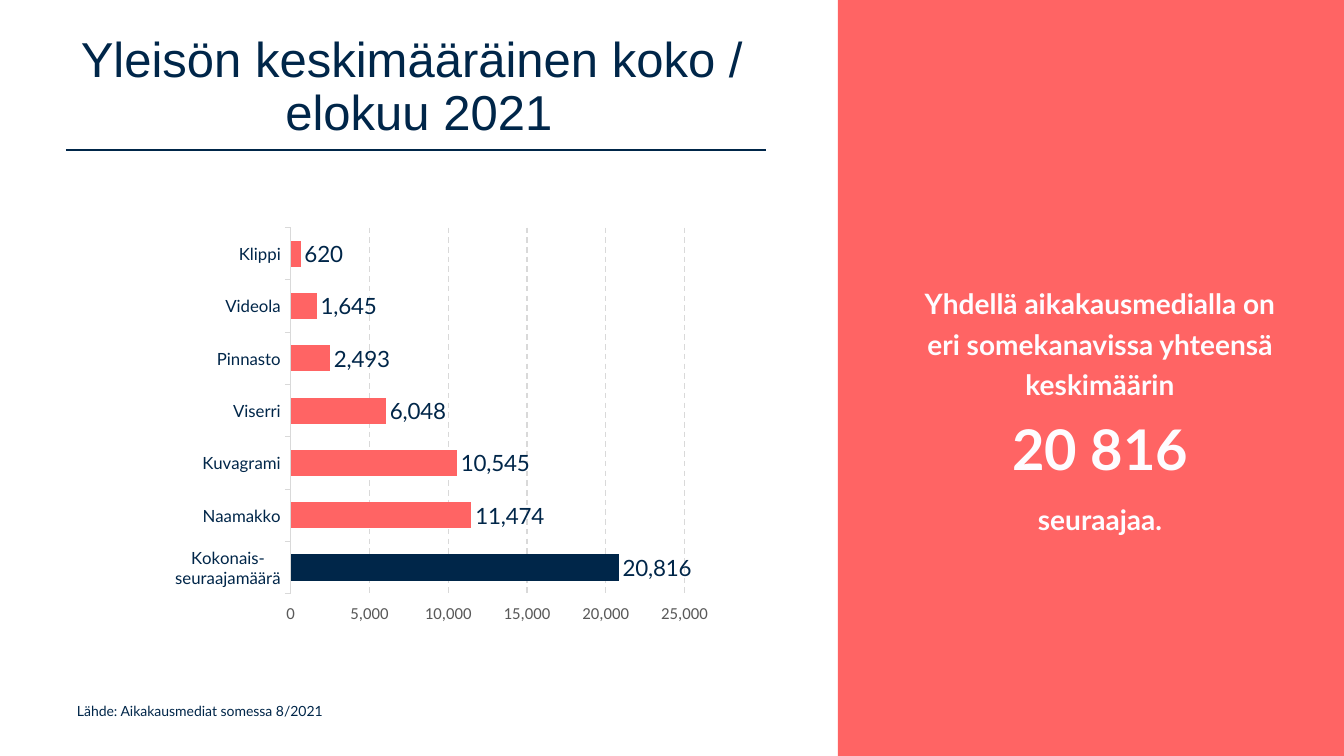
from dataclasses import dataclass

from pptx import Presentation
from pptx.chart.data import CategoryChartData
from pptx.dml.color import RGBColor
from pptx.enum.chart import XL_CHART_TYPE as ChartType
from pptx.enum.chart import XL_LABEL_POSITION as LabelPos
from pptx.enum.chart import XL_TICK_MARK as Tick
from pptx.enum.dml import MSO_LINE_DASH_STYLE as Dash
from pptx.enum.shapes import MSO_CONNECTOR as Connector
from pptx.enum.shapes import MSO_SHAPE as Shape
from pptx.enum.text import MSO_ANCHOR as Anchor
from pptx.enum.text import PP_ALIGN as Align
from pptx.oxml import parse_xml
from pptx.oxml.ns import nsdecls, qn
from pptx.slide import Slide
from pptx.text.text import Font
from pptx.util import Emu, Pt

NAVY = RGBColor(0x00, 0x26, 0x49)
CORAL = RGBColor(0xFF, 0x64, 0x64)
OFF_WHITE = RGBColor(0xFE, 0xFC, 0xFF)
LIGHT_GREY = RGBColor(0xD9, 0xD9, 0xD9)
DARK_GREY = RGBColor(0x59, 0x59, 0x59)

SLIDE_W, SLIDE_H = 1344, 756
PANEL_X = 838

FOLLOWERS = [
    ("Kokonais-\nseuraajamäärä", 20816),
    ("Naamakko", 11474),
    ("Kuvagrami", 10545),
    ("Viserri", 6048),
    ("Pinnasto", 2493),
    ("Videola", 1645),
    ("Klippi", 620),
]


@dataclass(frozen=True)
class Piece:
    text: str
    size: int
    break_before: bool = False


@dataclass(frozen=True)
class TextBlock:
    box: tuple[int, int, int, int]
    paragraphs: list[list[Piece]]
    font: str
    color: RGBColor
    bold: bool = False
    align: Align = Align.CENTER
    anchor: Anchor = Anchor.MIDDLE
    line_spacing: float = 1.0
    space_before: int = 0


TEXTS = [
    TextBlock((0, 25, PANEL_X, 126),
              [[Piece("Yleisön keskimääräinen koko / ", 35),
                Piece("elokuu 2021", 35, break_before=True)]],
              "Arial", NAVY, line_spacing=0.9),
    TextBlock((911, 151, 378, 514),
              [[Piece("Yhdellä aikakausmedialla on eri somekanavissa "
                      "yhteensä keskimäärin", 20),
                Piece("20 816", 40, break_before=True)],
               [Piece("seuraajaa.", 20)]],
              "Lato", OFF_WHITE, bold=True, line_spacing=1.2, space_before=10),
    TextBlock((67, 698, 663, 44),
              [[Piece("Lähde: Aikakausmediat somessa 8/2021", 10)]],
              "Lato", NAVY, align=Align.LEFT, anchor=Anchor.TOP),
]


def px(length: int) -> Emu:
    return Emu(round(length * 12192000 / SLIDE_W))


def style_font(font: Font, name: str, size: int, color: RGBColor,
               bold: bool = False) -> None:
    font.name = name
    font.size = Pt(size)
    font.bold = bold
    font.color.rgb = color


def draw_text(slide: Slide, block: TextBlock) -> None:
    frame = slide.shapes.add_textbox(*map(px, block.box)).text_frame
    frame.word_wrap = True
    frame.vertical_anchor = block.anchor
    for index, pieces in enumerate(block.paragraphs):
        paragraph = frame.add_paragraph() if index else frame.paragraphs[0]
        paragraph.alignment = block.align
        paragraph.line_spacing = block.line_spacing
        if index:
            paragraph.space_before = Pt(block.space_before)
        for piece in pieces:
            if piece.break_before:
                paragraph.add_line_break()
            run = paragraph.add_run()
            run.text = piece.text
            style_font(run.font, block.font, piece.size, block.color, block.bold)


def draw_panel(slide: Slide) -> None:
    panel = slide.shapes.add_shape(
        Shape.RECTANGLE, px(PANEL_X), 0, px(SLIDE_W - PANEL_X), px(SLIDE_H))
    panel.shadow.inherit = False
    panel.fill.solid()
    panel.fill.fore_color.rgb = CORAL
    panel.line.fill.background()


def draw_title_rule(slide: Slide) -> None:
    rule = slide.shapes.add_connector(
        Connector.STRAIGHT, px(66), px(150), px(766), px(150))
    rule.line.color.rgb = NAVY
    rule.line.width = Pt(1)
    rule.element.spPr.append(parse_xml(f"<a:effectLst {nsdecls('a')}/>"))


def draw_follower_chart(slide: Slide) -> None:
    data = CategoryChartData(number_format="#,##0")
    data.categories = [channel for channel, _ in FOLLOWERS]
    data.add_series("Series 1", [count for _, count in FOLLOWERS])
    chart = slide.shapes.add_chart(
        ChartType.BAR_CLUSTERED, 0, px(190), px(PANEL_X), px(437), data).chart
    chart.has_title = False
    chart.has_legend = False
    chart.font.name = "Calibri"
    chart.font.size = Pt(10)

    # Bars: the total stands out in navy
    plot = chart.plots[0]
    plot.gap_width = 100
    plot.vary_by_categories = False
    series = plot.series[0]
    series.invert_if_negative = False
    for target, color in ((series, CORAL), (series.points[0], NAVY)):
        target.format.fill.solid()
        target.format.fill.fore_color.rgb = color

    labels = series.data_labels
    labels.show_value = True
    labels.position = LabelPos.OUTSIDE_END
    labels.number_format = "#,##0"
    labels.number_format_is_linked = False
    style_font(labels.font, "Lato", 16, NAVY)

    # Axes
    channels = chart.category_axis
    channels.major_tick_mark = Tick.OUTSIDE
    channels.format.line.color.rgb = LIGHT_GREY
    channels.format.line.width = Pt(0.75)
    style_font(channels.tick_labels.font, "Lato", 12, NAVY)

    counts = chart.value_axis
    counts.minimum_scale, counts.maximum_scale = 0, 25000
    counts.major_unit = 5000
    counts.major_tick_mark = Tick.OUTSIDE
    counts.format.line.fill.background()
    counts.has_major_gridlines = True
    grid = counts.major_gridlines.format.line
    grid.color.rgb = LIGHT_GREY
    grid.width = Pt(1)
    grid.dash_style = Dash.DASH
    counts.tick_labels.number_format = "#,##0"
    counts.tick_labels.number_format_is_linked = False
    style_font(counts.tick_labels.font, "Calibri", 12, DARK_GREY)

    # Fixed place of the plot inside the chart
    plot_area = chart.element.find(".//" + qn("c:plotArea"))
    for layout in plot_area.findall(qn("c:layout")):
        plot_area.remove(layout)
    sizes = "".join(f'<c:{tag} val="{share}"/>' for tag, share in
                    (("x", 0.347), ("y", 0.086), ("w", 0.47), ("h", 0.838)))
    plot_area.insert(0, parse_xml(
        f"<c:layout {nsdecls('c')}><c:manualLayout>"
        '<c:layoutTarget val="inner"/><c:xMode val="edge"/><c:yMode val="edge"/>'
        f"{sizes}</c:manualLayout></c:layout>"))


def main() -> None:
    deck = Presentation()
    deck.slide_width, deck.slide_height = px(SLIDE_W), px(SLIDE_H)
    slide = deck.slides.add_slide(deck.slide_layouts[6])
    draw_panel(slide)
    draw_title_rule(slide)
    for block in TEXTS:
        draw_text(slide, block)
    draw_follower_chart(slide)
    deck.save("out.pptx")


if __name__ == "__main__":
    main()
